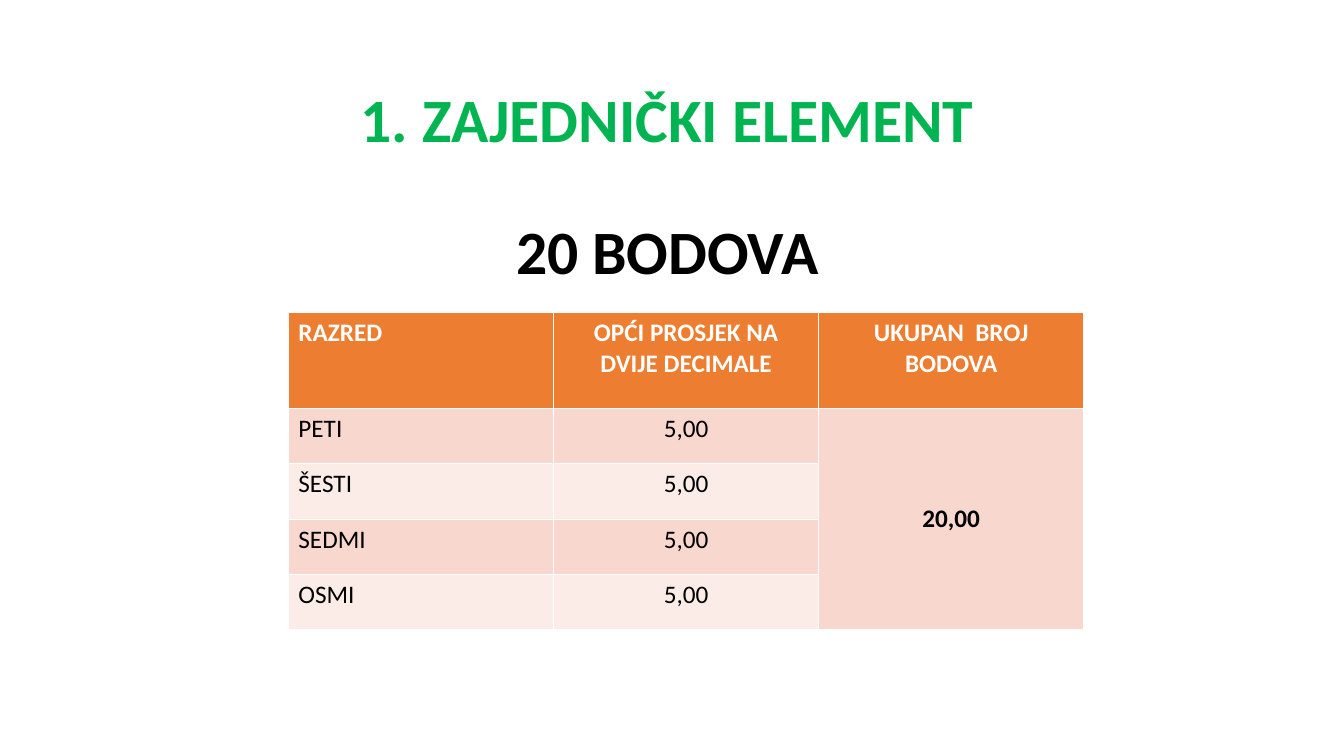
from pptx import Presentation
from pptx.dml.color import RGBColor
from pptx.enum.text import MSO_ANCHOR, MSO_AUTO_SIZE, PP_ALIGN as Align
from pptx.util import Inches, Pt

GREEN = RGBColor(0x00, 0xB4, 0x51)
BLACK = RGBColor(0x00, 0x00, 0x00)
WHITE = RGBColor(0xFF, 0xFF, 0xFF)
ORANGE = RGBColor(0xED, 0x7D, 0x31)
DARK_BAND = RGBColor(0xF8, 0xD7, 0xCE)
LIGHT_BAND = RGBColor(0xFC, 0xEC, 0xE8)


def write(paragraph, text, size=18, color=BLACK, bold=False, align=Align.CENTER):
    paragraph.alignment = align
    run = paragraph.add_run()
    run.text = text
    run.font.name = "Calibri"
    run.font.size = Pt(size)
    run.font.bold = bold
    run.font.color.rgb = color


presentation = Presentation()
presentation.slide_width = Inches(13.33)
presentation.slide_height = Inches(7.5)
slide = presentation.slides.add_slide(presentation.slide_layouts[5])

title = slide.shapes.title
title.left, title.top = Inches(0.83), Inches(0.4)
title.width, title.height = Inches(11.58), Inches(2.94)
title_frame = title.text_frame
title_frame.word_wrap = True
title_frame.auto_size = MSO_AUTO_SIZE.NONE
title_frame.vertical_anchor = MSO_ANCHOR.MIDDLE
heading = title_frame.paragraphs[0]
points = title_frame.add_paragraph()
write(heading, "1. ZAJEDNIČKI ELEMENT", size=44, color=GREEN, bold=True)
write(points, "20 BODOVA", size=44, bold=True)
heading.line_spacing = points.line_spacing = 0.9
points.space_before = Pt(47)

rows = [
    ["RAZRED", "OPĆI PROSJEK NA DVIJE DECIMALE", "UKUPAN  BROJ BODOVA"],
    ["PETI", "5,00", "20,00"],
    ["ŠESTI", "5,00", ""],
    ["SEDMI", "5,00", ""],
    ["OSMI", "5,00", ""],
]
table = slide.shapes.add_table(
    len(rows), 3, Inches(2.86), Inches(3.1), Inches(7.89), Inches(3.15)
).table
for column in table.columns:
    column.width = Inches(2.63)

for row_index, row in enumerate(rows):
    is_header = row_index == 0
    table.rows[row_index].height = Inches(0.95 if is_header else 0.55)
    band = DARK_BAND if row_index % 2 else LIGHT_BAND
    for column_index, text in enumerate(row):
        cell = table.cell(row_index, column_index)
        cell.fill.solid()
        cell.fill.fore_color.rgb = ORANGE if is_header else band
        if text:
            write(
                cell.text_frame.paragraphs[0],
                text,
                color=WHITE if is_header else BLACK,
                bold=is_header or column_index == 2,
                align=Align.CENTER if column_index else Align.LEFT,
            )

total = table.cell(1, 2)
total.merge(table.cell(4, 2))
total.vertical_anchor = MSO_ANCHOR.MIDDLE

presentation.save("out.pptx")
